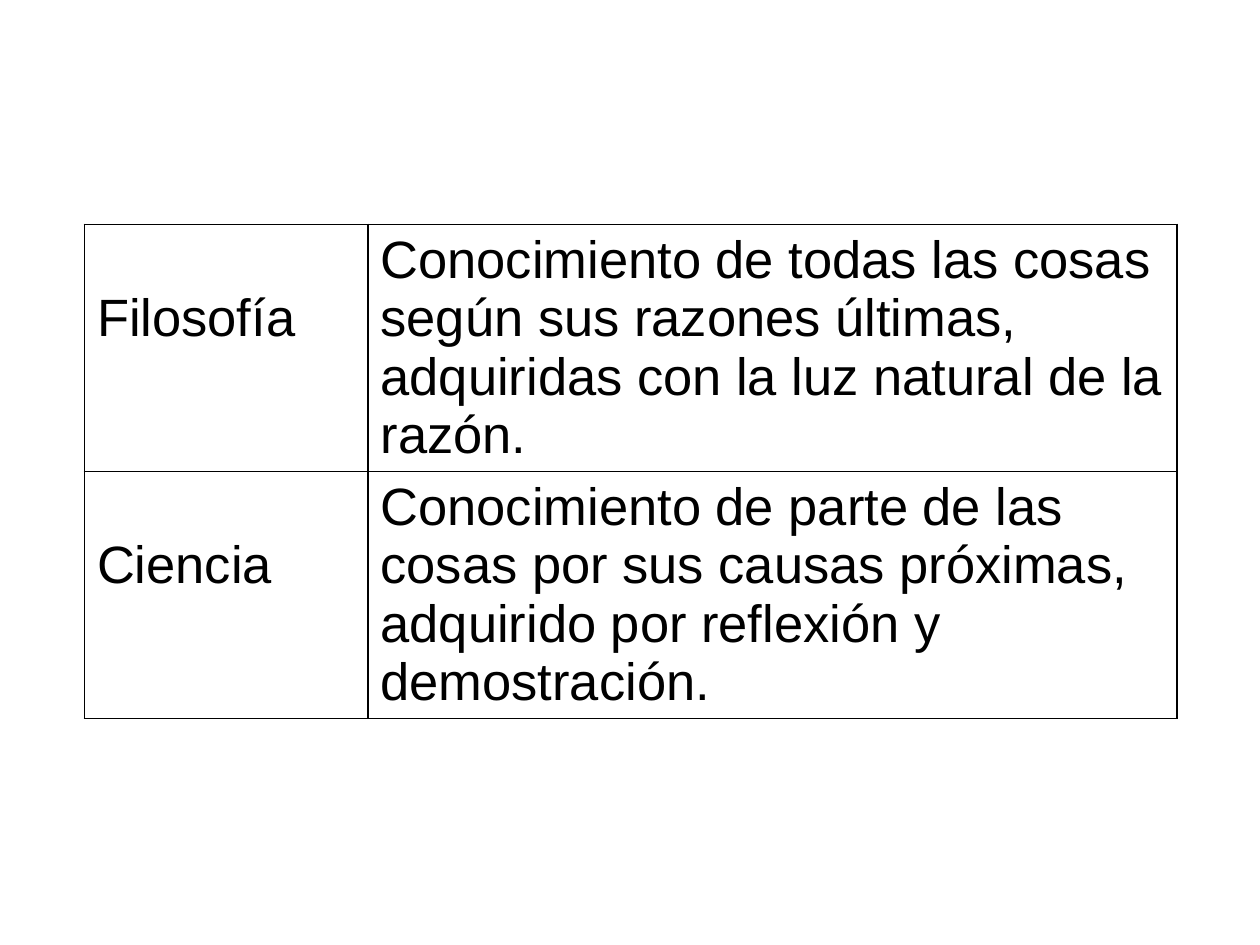
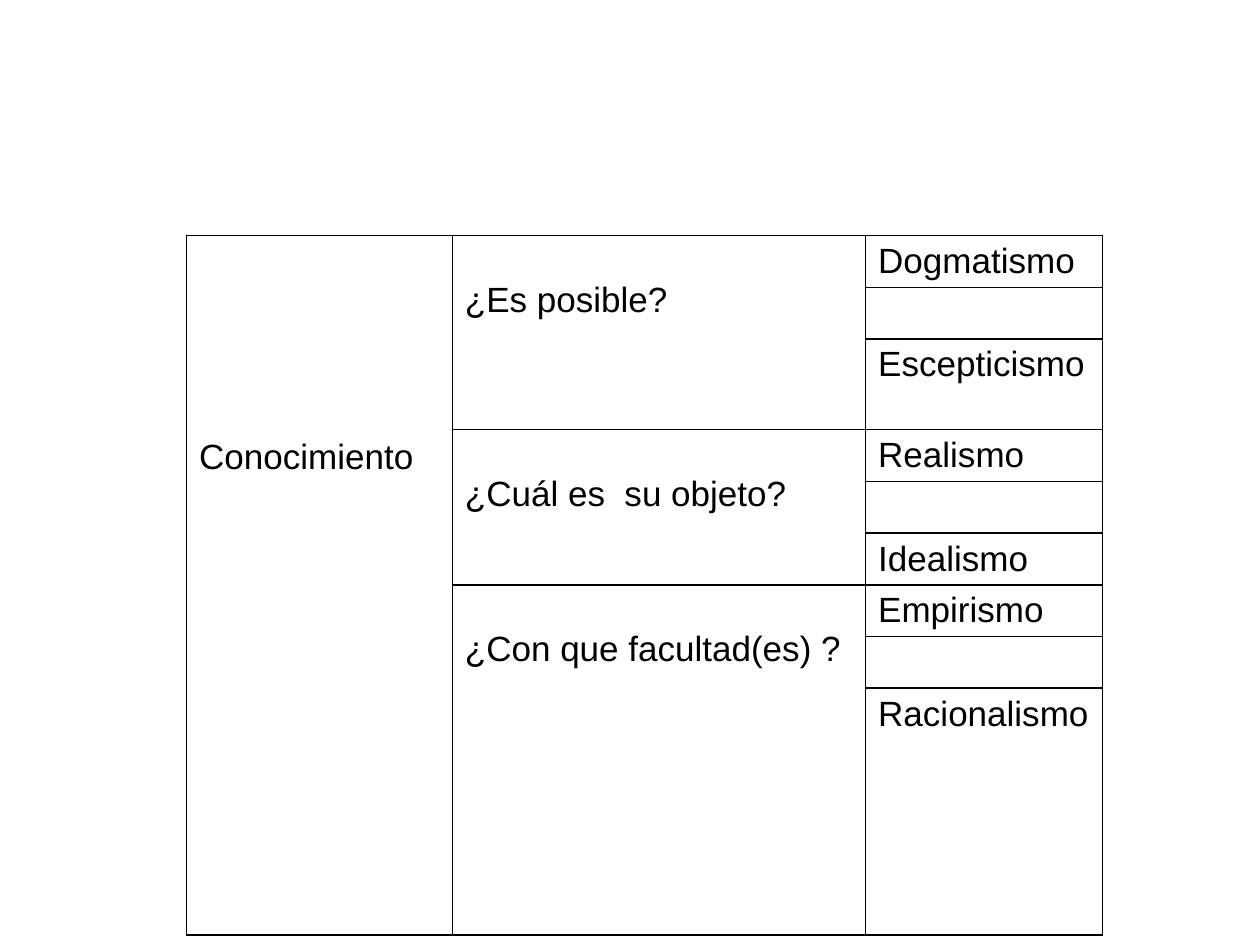
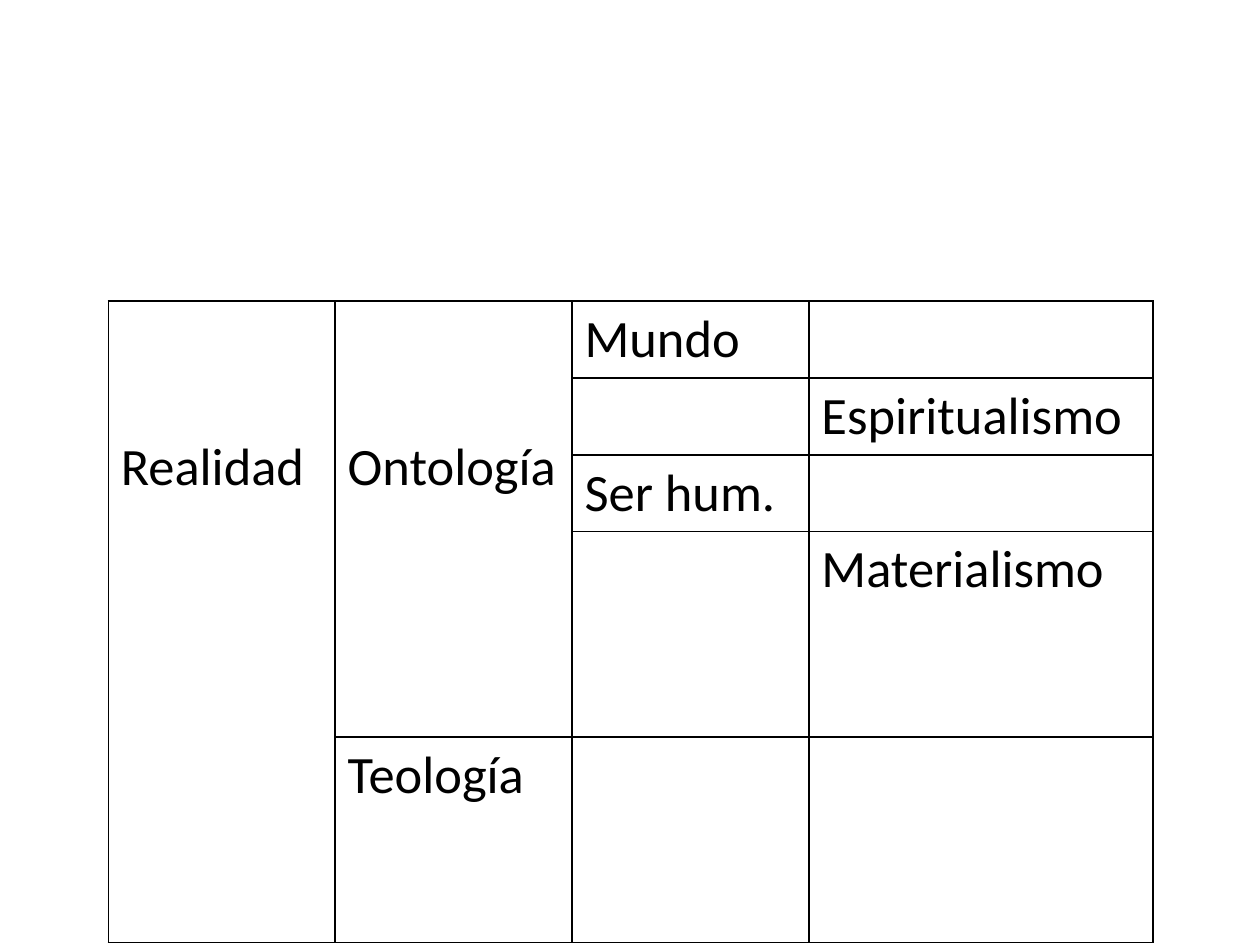
from dataclasses import dataclass

from lxml import etree
from pptx import Presentation
from pptx.dml.color import RGBColor
from pptx.enum import text
from pptx.oxml import ns
from pptx.util import Inches, Pt


@dataclass(frozen=True)
class Theme:
    ink: str = "000000"
    rule_width: float = 1
    large: int = 30
    small: int = 20
    sans: str = "Arial"
    humanist: str = "Calibri"
    cell_padding: float = 0.05


THEME = Theme()
# Height of a text line relative to its type size
LINE_RATIO = {THEME.sans: 1.117, THEME.humanist: 1.22}


@dataclass(frozen=True)
class Entry:
    """Text of a cell, the rows it spans and the lines it is lowered by."""
    words: str
    rows: int = 1
    lowered: int = 0


def add_page(deck):
    return deck.slides.add_slide(deck.slide_layouts[6])


def draw_borders(cell):
    """Rule all four sides of a cell."""
    properties = cell._tc.get_or_add_tcPr()
    for position, side in enumerate(("lnL", "lnR", "lnT", "lnB")):
        line = etree.Element(ns.qn(f"a:{side}"), w=str(Pt(THEME.rule_width)))
        fill = etree.SubElement(line, ns.qn("a:solidFill"))
        etree.SubElement(fill, ns.qn("a:srgbClr"), val=THEME.ink)
        properties.insert(position, line)


def write_entry(cell, entry, font, size):
    """Write a cell's text, lowered by whole lines."""
    lead = entry.lowered * size * LINE_RATIO[font] / 72
    cell.margin_top = Inches(THEME.cell_padding + lead)
    span = cell.text_frame.paragraphs[0].add_run()
    span.text = entry.words
    for name, value in {"name": font, "size": Pt(size), "bold": False}.items():
        setattr(span.font, name, value)
    span.font.color.rgb = RGBColor.from_string(THEME.ink)


def add_scheme(page, left, top, widths, heights, entries, font, size):
    """Add a ruled table; entries maps (row, column) to its Entry."""
    frame = page.shapes.add_table(
        len(heights), len(widths), Inches(left), Inches(top),
        Inches(sum(widths)), Inches(sum(heights)))
    table = frame.table
    for name, value in {"first_row": False, "horz_banding": False}.items():
        setattr(table, name, value)
    for column, width in zip(table.columns, widths):
        column.width = Inches(width)
    for row, height in zip(table.rows, heights):
        row.height = Inches(height)

    # Plain ruled cells
    for cell in table.iter_cells():
        cell.fill.background()
        cell.vertical_anchor = text.MSO_ANCHOR.TOP
        draw_borders(cell)

    # Text and spans
    for (row, column), entry in entries.items():
        cell = table.cell(row, column)
        if entry.rows > 1:
            cell.merge(table.cell(row + entry.rows - 1, column))
        write_entry(cell, entry, font, size)


def add_definitions(page):
    definitions = {
        "Filosofía": "Conocimiento de todas las cosas según sus razones "
                     "últimas, adquiridas con la luz natural de la razón.",
        "Ciencia": "Conocimiento de parte de las cosas por sus causas "
                   "próximas, adquirido por reflexión y demostración.",
    }
    entries = {}
    for row, (term, meaning) in enumerate(definitions.items()):
        entries[row, 0] = Entry(term, lowered=1)
        entries[row, 1] = Entry(meaning)
    add_scheme(page, 0.67, 1.78, [2.25, 6.42], [1.96] * 2, entries,
               THEME.sans, THEME.large)


def add_knowledge(page):
    questions = {
        "¿Es posible?": ("Dogmatismo", "Escepticismo"),
        "¿Cuál es  su objeto?": ("Realismo", "Idealismo"),
        "¿Con que facultad(es) ?": ("Empirismo", "Racionalismo"),
    }
    entries = {(0, 0): Entry("Conocimiento", rows=9, lowered=5)}
    # Each question faces two opposed answers with an empty row between
    for number, (question, answers) in enumerate(questions.items()):
        first = 3 * number
        entries[first, 1] = Entry(question, rows=3, lowered=1)
        for row, answer in zip((first, first + 2), answers):
            entries[row, 2] = Entry(answer)
    heights = [0.41] * 2 + [0.72] + [0.41] * 5 + [1.96]
    add_scheme(page, 1.48, 1.87, [2.11, 3.28, 1.88], heights, entries,
               THEME.sans, THEME.small)


def add_reality(page):
    entries = {
        (0, 0): Entry("Realidad", rows=5, lowered=2),
        (0, 1): Entry("Ontología", rows=4, lowered=2),
        (4, 1): Entry("Teología"),
        (0, 2): Entry("Mundo"),
        (2, 2): Entry("Ser hum."),
        (1, 3): Entry("Espiritualismo"),
        (3, 3): Entry("Materialismo"),
    }
    add_scheme(page, 0.86, 2.39, [1.8, 1.88, 1.88, 2.73],
               [0.61] * 3 + [1.63] * 2, entries, THEME.humanist, THEME.large)


def main():
    deck = Presentation()
    deck.slide_width, deck.slide_height = Inches(10), Inches(7.5)
    for build in (add_definitions, add_knowledge, add_reality):
        build(add_page(deck))
    deck.save("out.pptx")


if __name__ == "__main__":
    main()
